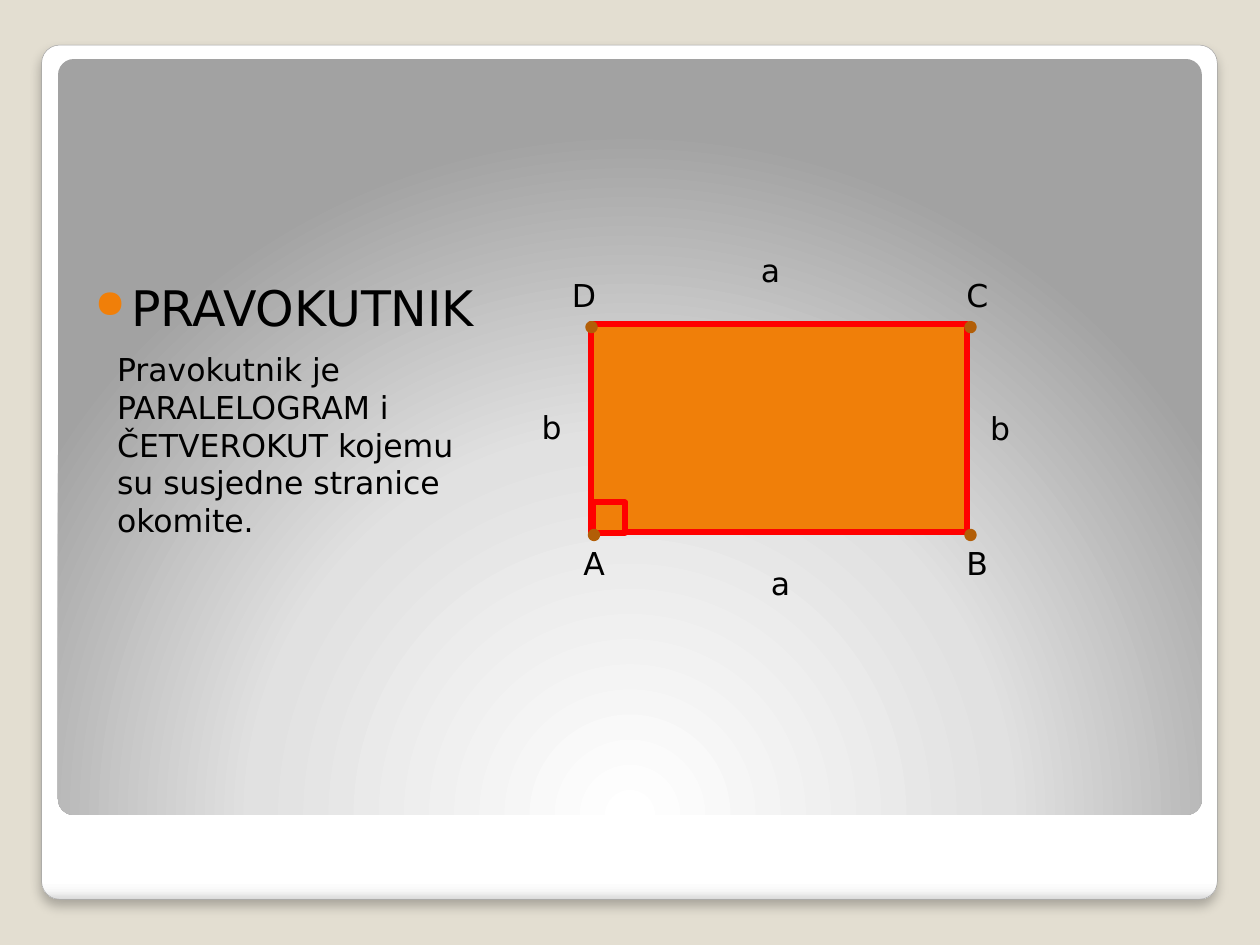
from lxml import etree
from pptx import Presentation
from pptx import util as u
from pptx.dml import color
from pptx.enum import shapes
from pptx.oxml import ns

FONT = "DejaVu Sans"
COLORS = {
    "background": "E3DED1", "white": "FFFFFF", "edge": "A4A4A4",
    "orange": "F07F09", "red": "FF0000", "brown": "B25E07", "text": "000000",
}
RGB = {name: color.RGBColor.from_string(value) for name, value in COLORS.items()}
A = "http://schemas.openxmlformats.org/drawingml/2006/main"

deck = Presentation()
deck.slide_width, deck.slide_height = u.Cm(25.4), u.Cm(19.05)
page = deck.slides.add_slide(deck.slide_layouts[6])
page.background.fill.solid()
page.background.fill.fore_color.rgb = RGB["background"]


def add_shape(kind, left, top, width, height, fill=None, line=None, weight=0.12):
    shape = page.shapes.add_shape(kind, u.Cm(left), u.Cm(top), u.Cm(width), u.Cm(height))
    shape.shadow.inherit = False
    if fill:
        shape.fill.solid()
        shape.fill.fore_color.rgb = RGB[fill]
    if line:
        shape.line.color.rgb = RGB[line]
        shape.line.width = u.Cm(weight)
    else:
        shape.line.fill.background()
    return shape


def add_text(words, left, top, width, height, size=18):
    box = page.shapes.add_textbox(u.Cm(left), u.Cm(top), u.Cm(width), u.Cm(height))
    box.text_frame.word_wrap = True
    para = box.text_frame.paragraphs[0]
    para.text = words
    para.font.size, para.font.name = u.Pt(size), FONT
    para.font.color.rgb = RGB["text"]
    return para


# Card and panel with gradient fills
ROUND = shapes.MSO_SHAPE.ROUNDED_RECTANGLE
card = add_shape(ROUND, 0.84, 0.91, 23.7, 17.22, line="edge", weight=0.01)
panel = add_shape(ROUND, 1.17, 1.19, 23.06, 15.24)
gradients = [
    (card, [(0, "FFFFFF"), (98, "FFFFFF"), (99, "F7F7F7"), (100, "DADADA")],
     '<a:lin ang="5400000" scaled="0"/>'),
    (panel, [(0, "FFFFFF"), (55, "E1E1E1"), (100, "A2A2A2")],
     '<a:path path="circle"><a:fillToRect l="50000" t="175000" r="50000" b="-75000"/></a:path>'),
]
for shape, stops, direction in gradients:
    shape.adjustments[0] = 0.021
    shape.fill.background()
    stop_xml = "".join(
        f'<a:gs pos="{place * 1000}"><a:srgbClr val="{tone}"/></a:gs>' for place, tone in stops)
    gradient = etree.fromstring(
        f'<a:gradFill xmlns:a="{A}" rotWithShape="1"><a:gsLst>{stop_xml}</a:gsLst>{direction}</a:gradFill>')
    properties = shape._element.spPr
    properties.replace(properties.find(ns.qn("a:noFill")), gradient)

# Soft shadow under the card
card._element.spPr.find(ns.qn("a:effectLst")).append(etree.fromstring(
    f'<a:outerShdw xmlns:a="{A}" blurRad="{u.Pt(6)}" dist="{u.Pt(4)}" dir="5400000" algn="t" '
    'rotWithShape="0"><a:srgbClr val="000000"><a:alpha val="25000"/></a:srgbClr></a:outerShdw>'))

# Bulleted heading
heading = add_text("PRAVOKUTNIK", 1.4, 5.46, 9.6, 1.4, size=28)
heading_frame = page.shapes[-1].text_frame
heading_frame.margin_left = u.Cm(0.51)
indent = u.Cm(0.74)
heading_format = heading._p.get_or_add_pPr()
heading_format.set("marL", str(indent))
heading_format.set("indent", str(-indent))
bullet = etree.fromstring(
    f'<a:pPr xmlns:a="{A}"><a:buClr><a:srgbClr val="{COLORS["orange"]}"/></a:buClr>'
    '<a:buSzPct val="80000"/><a:buChar char="●"/></a:pPr>')
for position, part in enumerate(list(bullet)):
    heading_format.insert(position, part)

# Rectangle with its right-angle mark
left, top, width, height = 11.91, 6.53, 7.59, 4.19
right, bottom = left + width, top + height
RECT = shapes.MSO_SHAPE.RECTANGLE
add_shape(RECT, left, top, width, height, "orange", "red")
add_shape(RECT, left + 0.05, bottom - 0.59, 0.64, 0.61, "orange", "red")

# Corner points
for x, y in [(left, bottom), (right, bottom), (left - 0.05, top), (right, top)]:
    add_shape(shapes.MSO_SHAPE.OVAL, x, y, 0.13, 0.13, "orange", "brown")

# Side and corner labels
labels = [
    ("a", 15.29, 11.25, 1.6), ("a", 15.09, 4.93, 1.19),
    ("b", 10.67, 8.1, 1.19), ("b", 19.71, 8.13, 1.4),
    ("A", 11.51, 10.85, 0.79), ("B", 19.23, 10.85, 0.79),
    ("C", 19.23, 5.44, 0.79), ("D", 11.28, 5.44, 1.02),
]
for letter, x, y, label_width in labels:
    add_text(letter, x, y, label_width, 1.02)

# Definition
add_text("Pravokutnik je PARALELOGRAM i ČETVEROKUT kojemu su susjedne stranice okomite.",
         2.11, 6.93, 8, 4.11)

deck.save("out.pptx")
